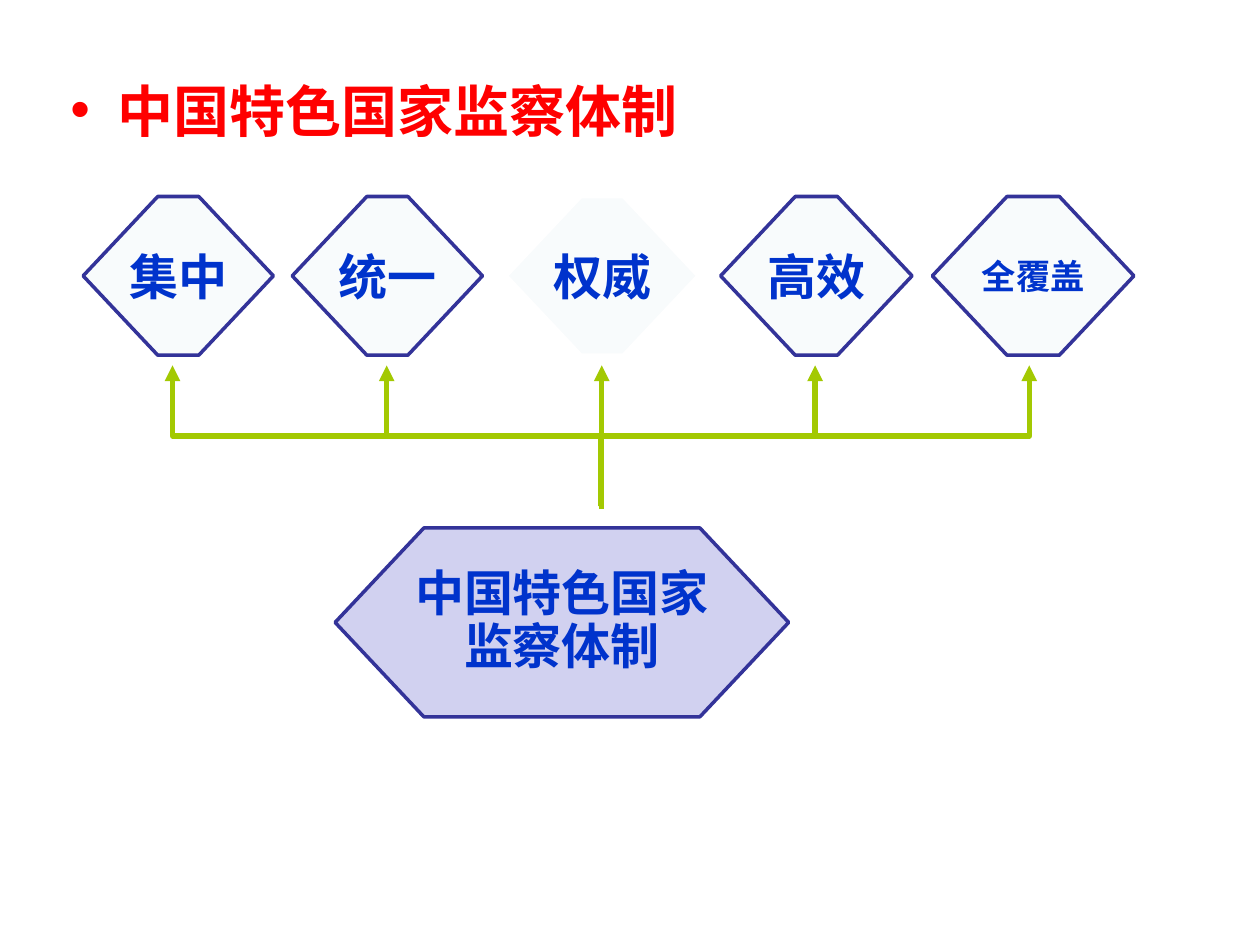
from dataclasses import dataclass

import pptx
import pptx.dml.color
import pptx.enum.shapes
import pptx.enum.text
import pptx.oxml.ns
import pptx.oxml.xmlchemy
import pptx.util
from pptx.oxml import parse_xml

Pt = pptx.util.Pt
RGBColor = pptx.dml.color.RGBColor


@dataclass(frozen=True)
class Theme:
    title_color: RGBColor = RGBColor(0xFF, 0x00, 0x00)
    label_color: RGBColor = RGBColor(0x00, 0x33, 0xCC)
    arrow_color: RGBColor = RGBColor(0xA3, 0xC9, 0x02)
    outline: RGBColor = RGBColor(0x33, 0x33, 0x99)
    no_outline: RGBColor = RGBColor(0xFF, 0xFF, 0xFF)
    quality_fill: RGBColor = RGBColor(0xF8, 0xFB, 0xFC)
    system_fill: RGBColor = RGBColor(0xD1, 0xD1, 0xF0)
    title_font: str = "Noto Sans CJK SC"
    title_size: float = 32
    label_size: float = 28
    small_size: float = 19.6
    outline_width: float = 2
    arrow_width: float = 3


@dataclass(frozen=True)
class Hexagon:
    text: str
    left: float
    width: float
    font: str
    top: float = 112.3
    height: float = 90.7
    size: float = Theme.label_size
    fill: RGBColor = Theme.quality_fill
    outline: RGBColor = Theme.outline
    line_spacing: float = 1.0


@dataclass(frozen=True)
class Arrow:
    """An upward arrow that may step sideways halfway."""
    start_x: float
    start_y: float
    end_x: float


THEME = Theme()
SYSTEM = "中国特色国家监察体制"
ARROW_TIP = 208.8
CENTER = 343.4
GAP = 122.4

HEXAGONS = [
    Hexagon(SYSTEM, 191.5, 259.2, "Arial", top=301.7, height=108,
            fill=THEME.system_fill, line_spacing=0.9),
    Hexagon("集中", 47.5, 108.7, "Cabin"),
    Hexagon("统一", 167, 108.7, "Arial"),
    Hexagon("权威", 289.4, 109.4, "Arial", outline=THEME.no_outline),
    Hexagon("高效", 411.8, 109.4, "Cabin"),
    Hexagon("全覆盖", 532.8, 115.2, "Cabin", size=THEME.small_size),
]

ARROWS = [
    Arrow(CENTER + 0.5, 290.9, CENTER + 0.5),
    *(Arrow(CENTER, 289.4, CENTER + side * 2 * GAP) for side in (-1, 1)),
    *(Arrow(CENTER + side * GAP, 250.6, CENTER + side * GAP) for side in (-1, 1)),
]


def style_font(para, name: str, size: float, color: RGBColor) -> None:
    font = para.font
    font.size = Pt(size)
    font.bold = True
    font.color.rgb = color
    font.name = name


def add_xml(parent, tag: str, **attributes: str):
    child = parse_xml(f"<a:{tag} {pptx.oxml.ns.nsdecls('a')}/>")
    for name, value in attributes.items():
        child.set(name, value)
    parent.append(child)


def draw_title(page) -> None:
    box = page.shapes.add_textbox(Pt(33.1), Pt(47.5), Pt(653), Pt(398.9))
    box.text_frame.word_wrap = True
    para = box.text_frame.paragraphs[0]
    para.text = SYSTEM
    para.line_spacing = 0.8
    properties = para._p.get_or_add_pPr()
    properties.set("marL", str(Pt(27)))
    properties.set("indent", str(-Pt(27)))
    add_xml(properties, "buFont", typeface="Arial")
    add_xml(properties, "buChar", char="•")
    style_font(para, THEME.title_font, THEME.title_size, THEME.title_color)


def draw_arrow(page, arrow: Arrow) -> None:
    """Lay the elbow on its side, then turn it so both ends run vertically."""
    rise = arrow.start_y - ARROW_TIP
    run = abs(arrow.end_x - arrow.start_x)
    left = (arrow.start_x + arrow.end_x - rise) / 2
    top = (arrow.start_y + ARROW_TIP - run) / 2
    begin_y, end_y = top, top + run
    if arrow.end_x < arrow.start_x:
        begin_y, end_y = end_y, begin_y
    connector = page.shapes.add_connector(
        pptx.enum.shapes.MSO_CONNECTOR.ELBOW,
        Pt(left), Pt(begin_y), Pt(left + rise), Pt(end_y))
    connector.line.color.rgb = THEME.arrow_color
    connector.line.width = Pt(THEME.arrow_width)
    properties = connector._element.spPr
    properties.find(pptx.oxml.ns.qn("a:xfrm")).set("rot", str(270 * 60000))
    add_xml(properties.find(pptx.oxml.ns.qn("a:ln")), "tailEnd", type="triangle")
    add_xml(properties, "effectLst")


def draw_hexagon(page, hexagon: Hexagon) -> None:
    shape = page.shapes.add_shape(
        pptx.enum.shapes.MSO_SHAPE.HEXAGON, Pt(hexagon.left), Pt(hexagon.top),
        Pt(hexagon.width), Pt(hexagon.height))
    shape.adjustments[0] = 0.47
    shape.shadow.inherit = False
    shape.fill.solid()
    shape.fill.fore_color.rgb = hexagon.fill
    shape.line.color.rgb = hexagon.outline
    shape.line.width = Pt(THEME.outline_width)
    frame = shape.text_frame
    frame.word_wrap = True
    frame.margin_left = frame.margin_right = frame.margin_top = frame.margin_bottom = 0
    frame.vertical_anchor = pptx.enum.text.MSO_ANCHOR.MIDDLE
    para = frame.paragraphs[0]
    para.text = hexagon.text
    para.alignment = pptx.enum.text.PP_ALIGN.CENTER
    para.line_spacing = hexagon.line_spacing
    style_font(para, hexagon.font, hexagon.size, THEME.label_color)


def main() -> None:
    deck = pptx.Presentation()
    deck.slide_width, deck.slide_height = Pt(720), Pt(540)
    page = deck.slides.add_slide(deck.slide_layouts[6])
    draw_title(page)
    for arrow in ARROWS:
        draw_arrow(page, arrow)
    for hexagon in HEXAGONS:
        draw_hexagon(page, hexagon)
    deck.save("out.pptx")


if __name__ == "__main__":
    main()
